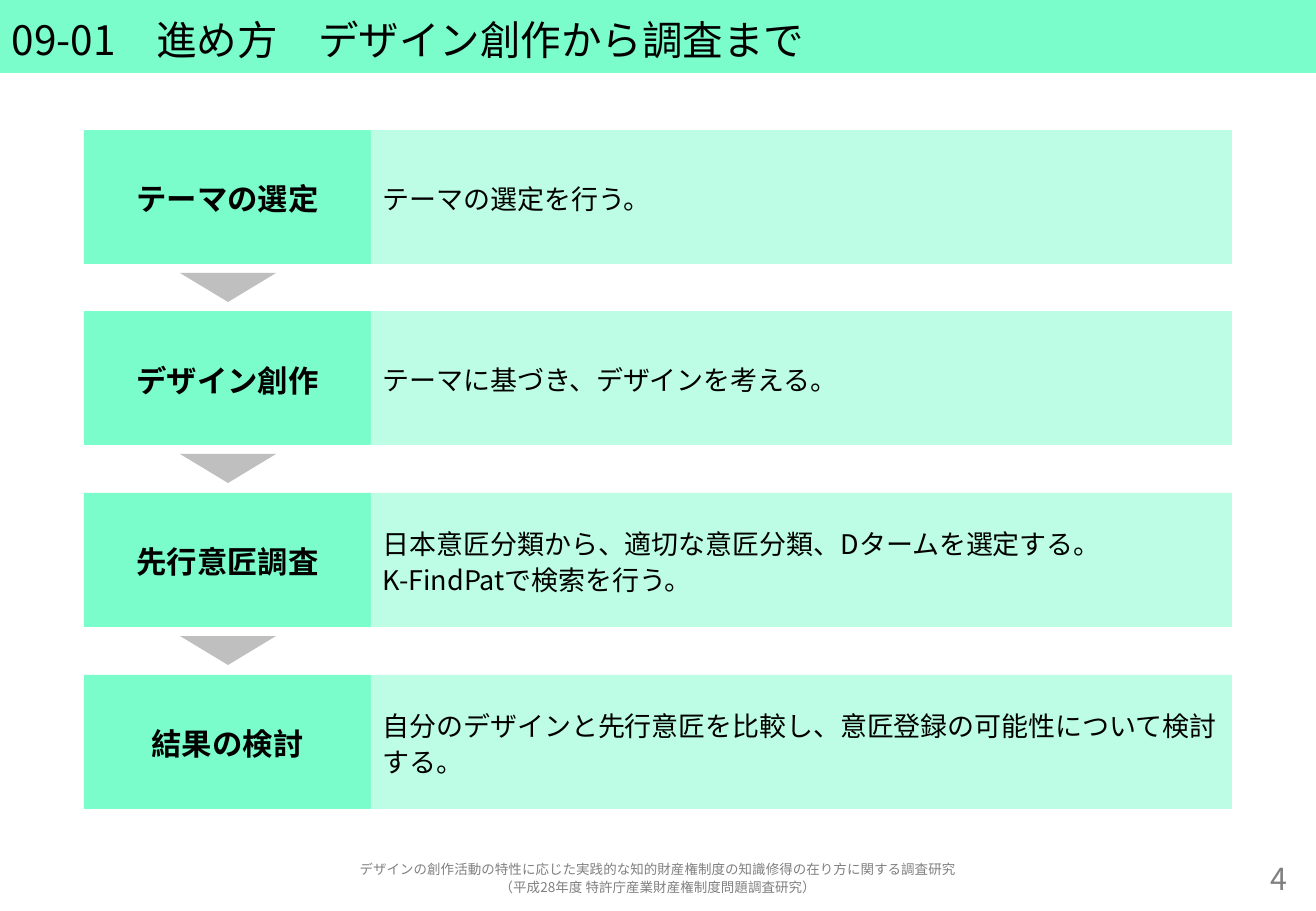
import pptx
import pptx.util
import pptx.dml.color
import pptx.enum.shapes
import pptx.enum.text
import pptx.oxml.ns
import lxml.etree

EMU_PER_PX = 7526
SLIDE_W, SLIDE_H = 1316, 911
FONT = "Noto Sans CJK JP"
COLORS = {
    "mint": "7BFCCB",
    "pale_mint": "BDFDE5",
    "arrow": "BFBFBF",
    "text": "000000",
    "footer": "808080",
}
SHAPES = pptx.enum.shapes.MSO_SHAPE
ALIGN = pptx.enum.text.PP_ALIGN

STEPS = [
    ("テーマの選定", "テーマの選定を行う。"),
    ("デザイン創作", "テーマに基づき、デザインを考える。"),
    ("先行意匠調査", "日本意匠分類から、適切な意匠分類、Dタームを選定する。\nK-FindPatで検索を行う。"),
    ("結果の検討", "自分のデザインと先行意匠を比較し、意匠登録の可能性について検討する。"),
]
FOOTER = (
    "デザインの創作活動の特性に応じた実践的な知的財産権制度の知識修得の在り方に関する調査研究\n"
    "（平成28年度 特許庁産業財産権制度問題調査研究）"
)

# Step grid
FIRST_TOP, LAST_TOP, STEP_H = 130, 675, 134
LABEL_LEFT, LABEL_W = 84, 287
DETAIL_W = 861
ARROW_W, ARROW_H = 96, 29


def emu(*lengths):
    return [pptx.util.Emu(length * EMU_PER_PX) for length in lengths]


def rgb(color):
    return pptx.dml.color.RGBColor.from_string(COLORS[color])


def write(holder, text, size, color="text", align=ALIGN.LEFT, bold=False):
    frame = holder.text_frame
    frame.word_wrap = True
    frame.vertical_anchor = pptx.enum.text.MSO_ANCHOR.MIDDLE
    frame.text = text
    for paragraph in frame.paragraphs:
        paragraph.alignment = align
        paragraph.line_spacing = 1.1
        for run in paragraph.runs:
            run.font.name = FONT
            run.font.size = pptx.util.Pt(size)
            run.font.bold = bold
            run.font.color.rgb = rgb(color)
            # Japanese characters take the East Asian font
            east_asian = lxml.etree.SubElement(
                run.font._element, pptx.oxml.ns.qn("a:ea"))
            east_asian.set("typeface", FONT)


def add_block(slide, kind, box, color):
    block = slide.shapes.add_shape(kind, *emu(*box))
    block.shadow.inherit = False
    block.fill.solid()
    block.fill.fore_color.rgb = rgb(color)
    block.line.fill.background()
    return block


def add_note(slide, box, text, size, align):
    note = slide.shapes.add_textbox(*emu(*box))
    write(note, text, size, "footer", align)


def add_step(slide, top, label, detail):
    label_box = add_block(
        slide, SHAPES.RECTANGLE, (LABEL_LEFT, top, LABEL_W, STEP_H), "mint")
    write(label_box, label, 18, align=ALIGN.CENTER, bold=True)
    detail_box = add_block(
        slide, SHAPES.RECTANGLE,
        (LABEL_LEFT + LABEL_W, top, DETAIL_W, STEP_H), "pale_mint")
    write(detail_box, detail, 16)


def add_down_arrow(slide, step_top):
    left = LABEL_LEFT + (LABEL_W - ARROW_W + 1) // 2
    arrow = add_block(
        slide, SHAPES.ISOSCELES_TRIANGLE,
        (left, step_top + STEP_H + 9, ARROW_W, ARROW_H), "arrow")
    arrow.rotation = 180


def main():
    deck = pptx.Presentation()
    deck.slide_width, deck.slide_height = emu(SLIDE_W, SLIDE_H)
    slide = deck.slides.add_slide(deck.slide_layouts[6])

    # Title band
    title = add_block(slide, SHAPES.RECTANGLE, (0, 0, SLIDE_W, 73), "mint")
    write(title, "09-01　進め方　デザイン創作から調査まで", 24)

    # Steps, with an arrow between each pair
    gaps = len(STEPS) - 1
    for index, (label, detail) in enumerate(STEPS):
        top = FIRST_TOP + (LAST_TOP - FIRST_TOP) * index // gaps
        add_step(slide, top, label, detail)
        if index < gaps:
            add_down_arrow(slide, top)

    # Footer and page number
    add_note(slide, (17, 858, 1282, 38), FOOTER, 8, ALIGN.CENTER)
    add_note(slide, (1136, 858, 163, 38), "4", 18, ALIGN.RIGHT)

    deck.save("out.pptx")


if __name__ == "__main__":
    main()
